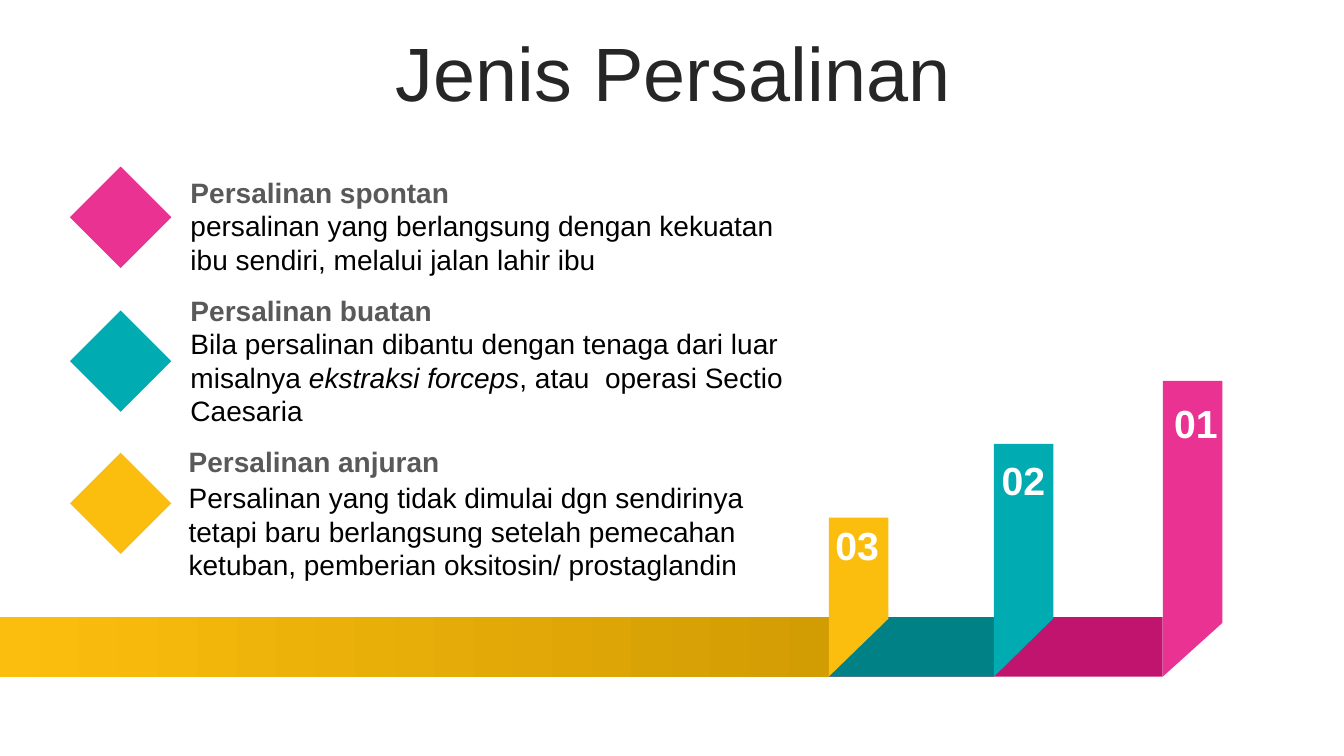
from dataclasses import dataclass

from pptx import Presentation
from pptx.dml.color import RGBColor
from pptx.enum.shapes import MSO_SHAPE
from pptx.enum.text import MSO_ANCHOR, PP_ALIGN
from pptx.util import Pt

DIAMOND, RECTANGLE = MSO_SHAPE.DIAMOND, MSO_SHAPE.RECTANGLE
LEFT, CENTER = PP_ALIGN.LEFT, PP_ALIGN.CENTER
TOP, MIDDLE = MSO_ANCHOR.TOP, MSO_ANCHOR.MIDDLE


@dataclass(frozen=True)
class Theme:
    font: str = "Arial"
    title: str = "262626"
    heading: str = "595959"
    body: str = "000000"
    white: str = "FFFFFF"
    pink: str = "EA3293"
    teal: str = "00ACB2"
    gold: str = "FCBE0E"
    dark_pink: str = "C1146F"
    dark_teal: str = "008185"
    dark_gold: str = "D29C03"
    title_size: int = 54
    text_size: int = 20
    number_size: int = 28


THEME = Theme()
BAND_TOP, BAND_HEIGHT = 440.8, 42.5
BAND_BOTTOM = BAND_TOP + BAND_HEIGHT
DIAMOND_LEFT, DIAMOND_SIZE = 50, 72.4
TEXT_WIDTH = 440
NUMBER_WIDTH, NUMBER_HEIGHT = 47.5, 41.2

# Diamond top, colour, text left, heading top, body top, heading, body runs (text, italic)
KINDS = [
    (119, THEME.pink, 129, 122, 145.4, "Persalinan spontan",
     [("persalinan yang berlangsung dengan kekuatan ibu sendiri, melalui jalan lahir ibu", False)]),
    (221.8, THEME.teal, 129, 206.2, 229.6, "Persalinan buatan",
     [("Bila persalinan dibantu dengan tenaga dari luar misalnya ", False),
      ("ekstraksi forceps", True),
      (", atau  operasi Sectio Caesaria", False)]),
    (323.4, THEME.gold, 127.7, 314, 339.8, "Persalinan anjuran",
     [("Persalinan yang tidak dimulai dgn sendirinya tetapi baru berlangsung setelah "
       "pemecahan ketuban, pemberian oksitosin/ prostaglandin", False)]),
]

# Band left, band right, colour; the later ones lie on top
BANDS = [
    (338.4, 830.4, THEME.dark_pink),
    (247.7, 710, THEME.dark_teal),
    (0, 592, THEME.gold),
]

# Left, top, fold height, colour, number, number left, number top
COLUMNS = [
    (592, 369.8, 442, THEME.gold, "03", 588.5, 368.9),
    (710, 317, 441.6, THEME.teal, "02", 707.3, 322.6),
    (830.6, 272, 445, THEME.pink, "01", 830.4, 281.5),
]


def rgb(color):
    return RGBColor.from_string(color)


def paint(sp, color):
    sp.shadow.inherit = False
    sp.line.fill.background()
    sp.fill.solid()
    sp.fill.fore_color.rgb = rgb(color)


def add_block(slide, kind, left, top, width, height, color):
    sp = slide.shapes.add_shape(kind, Pt(left), Pt(top), Pt(width), Pt(height))
    paint(sp, color)
    return sp


def shade(sp, start, end):
    """Fill a shape with a gradient from left to right."""
    sp.fill.gradient()
    sp.fill.gradient_angle = 0
    for stop, color in zip(sp.fill.gradient_stops, (start, end)):
        stop.color.rgb = rgb(color)


def add_text(slide, left, top, width, height, runs, size, color,
             bold=False, align=LEFT, anchor=TOP):
    """Add one paragraph made of (text, italic) runs and return it."""
    tf = slide.shapes.add_textbox(Pt(left), Pt(top), Pt(width), Pt(height)).text_frame
    tf.word_wrap = True
    tf.vertical_anchor = anchor
    p = tf.paragraphs[0]
    p.alignment = align
    for text, italic in runs:
        r = p.add_run()
        r.text = text
        r.font.name = THEME.font
        r.font.size = Pt(size)
        r.font.bold = bold
        r.font.italic = italic
        r.font.color.rgb = rgb(color)
    return p


def add_title(slide, text):
    p = add_text(slide, 25.2, 26.6, 911.5, 56.9, [(text, False)],
                 THEME.title_size, THEME.title, align=CENTER, anchor=MIDDLE)
    p.line_spacing = 0.9
    p.space_before = Pt(10)


def add_kind(slide, diamond_top, color, left, heading_top, body_top, heading, body):
    add_block(slide, DIAMOND, DIAMOND_LEFT, diamond_top, DIAMOND_SIZE, DIAMOND_SIZE, color)
    add_text(slide, left, heading_top, TEXT_WIDTH, 31.5, [(heading, False)],
             THEME.text_size, THEME.heading, bold=True)
    add_text(slide, left, body_top, TEXT_WIDTH, 79.5, body, THEME.text_size, THEME.body)


def add_column(slide, left, top, fold, color, number, number_left, number_top):
    """Add an upright ribbon with a slanted foot and its number."""
    right = left + BAND_HEIGHT
    builder = slide.shapes.build_freeform(Pt(right), Pt(top))
    corners = [(right, fold), (left, BAND_BOTTOM), (left, top)]
    builder.add_line_segments([(Pt(x), Pt(y)) for x, y in corners], close=True)
    paint(builder.convert_to_shape(), color)
    add_text(slide, number_left, number_top, NUMBER_WIDTH, NUMBER_HEIGHT, [(number, False)],
             THEME.number_size, THEME.white, bold=True, align=CENTER)


def main():
    prs = Presentation()
    prs.slide_width, prs.slide_height = Pt(960), Pt(540)
    slide = prs.slides.add_slide(prs.slide_layouts[6])
    add_title(slide, "Jenis Persalinan")
    for kind in KINDS:
        add_kind(slide, *kind)
    for left, right, color in BANDS:
        band = add_block(slide, RECTANGLE, left, BAND_TOP, right - left, BAND_HEIGHT, color)
    shade(band, THEME.gold, THEME.dark_gold)
    for column in COLUMNS:
        add_column(slide, *column)
    prs.save("out.pptx")


if __name__ == "__main__":
    main()
